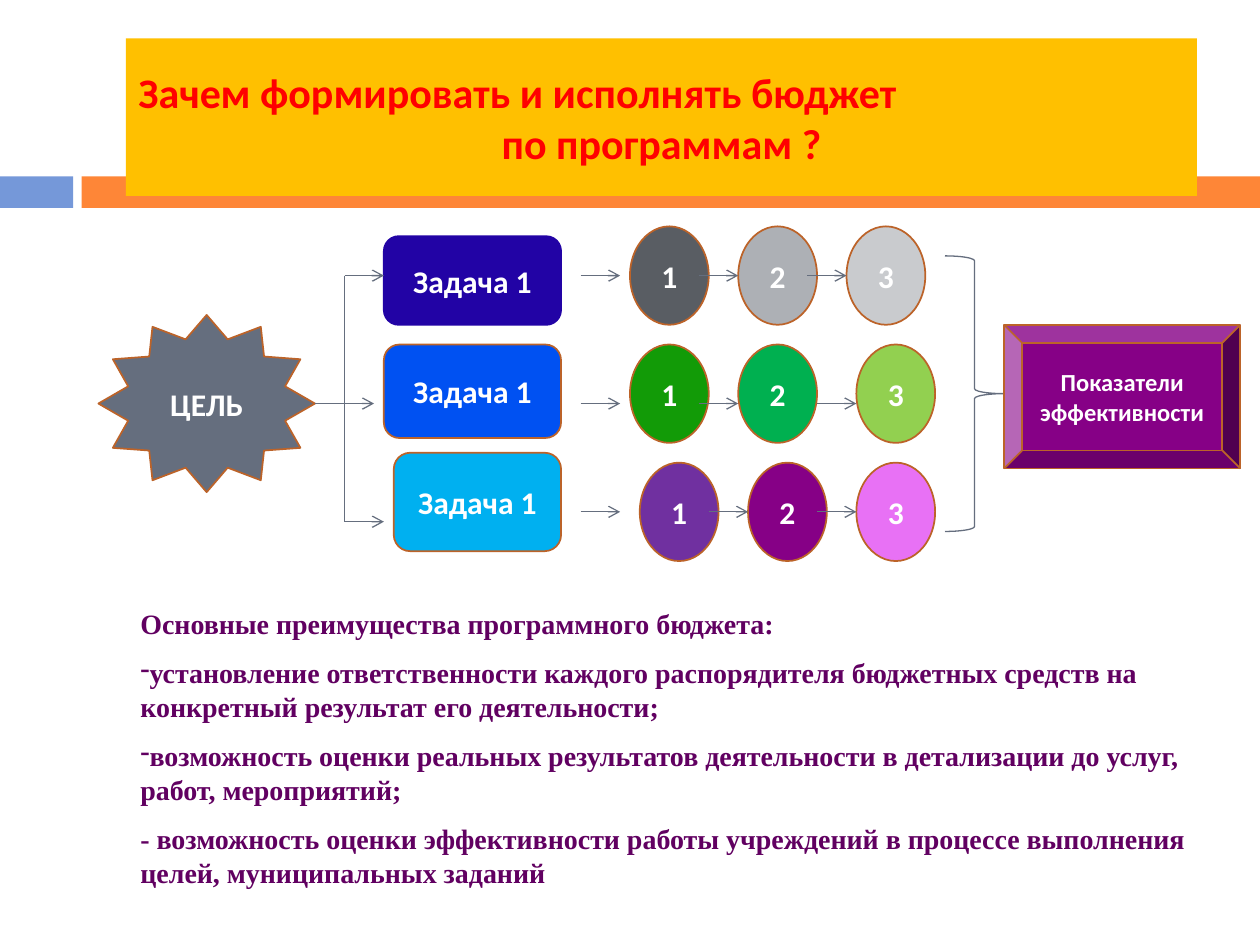
from dataclasses import dataclass
import lxml.etree
import pptx
import pptx.dml.color
import pptx.enum.shapes
import pptx.enum.text
import pptx.oxml.ns
import pptx.util

SHAPE = pptx.enum.shapes.MSO_SHAPE
ALIGN = pptx.enum.text.PP_ALIGN
ANCHOR = pptx.enum.text.MSO_ANCHOR
GRID = pptx.util.Inches(10) / 128  # 128 columns by 96 rows


@dataclass(frozen=True)
class Theme:
    head_font: str = "Calibri"
    body_font: str = "Times New Roman"
    title_size: int = 24
    label_size: int = 18
    result_size: int = 14
    body_size: int = 16
    blue: str = "7598D9"
    orange: str = "FE8637"
    gold: str = "FFC000"
    red: str = "FF0000"
    white: str = "FFFFFF"
    slate: str = "656E7E"
    outline: str = "BC6329"
    purple: str = "860086"
    body: str = "610061"


@dataclass(frozen=True)
class Box:
    col: float
    row: float
    cols: float
    rows: float

    def emu(self) -> list[int]:
        return [round(v * GRID) for v in (self.col, self.row, self.cols, self.rows)]


@dataclass(frozen=True)
class Task:
    box: Box
    fill: str
    line: str
    arrow_row: float
    step_row: float
    step_cols: tuple[float, ...]
    step_fills: tuple[str, ...]


T = Theme()
TASKS = [
    Task(Box(39, 24, 18, 9), "2203A5", "2203A5", 28, 23, (64, 75, 86),
         ("595D63", "ADB0B5", "C9CBCE")),
    Task(Box(39, 35, 18, 9.5), "0051F2", T.outline, 41, 35, (64, 75, 87),
         ("129B07", "00B050", "92D050")),
    Task(Box(40, 46, 17, 10), "00B0F0", T.outline, 52, 47, (65, 76, 87),
         ("7030A0", T.purple, "E871F5")),
]
BENEFITS = [
    ("Основные преимущества программного бюджета:", False),
    ("установление ответственности каждого распорядителя бюджетных средств на "
     "конкретный результат его деятельности;", True),
    ("возможность оценки реальных результатов деятельности в детализации до услуг, "
     "работ, мероприятий;", True),
    ("- возможность оценки эффективности работы учреждений в процессе выполнения "
     "целей, муниципальных заданий", False),
]


def rgb(value: str) -> pptx.dml.color.RGBColor:
    return pptx.dml.color.RGBColor.from_string(value)


def add_run(p, text: str, font: str, size: float, color: str) -> None:
    r = p.add_run()
    r.text = text
    for name, value in {"name": font, "size": pptx.util.Pt(size), "bold": True}.items():
        setattr(r.font, name, value)
    r.font.color.rgb = rgb(color)


def add_shape(s, kind, box: Box, fill: str | None, line: str | None = None,
              text: str = "", size: float = T.label_size, width: float = 1):
    sp = s.shapes.add_shape(kind, *box.emu())
    sp.shadow.inherit = False
    if fill:
        sp.fill.solid()
        sp.fill.fore_color.rgb = rgb(fill)
    else:
        sp.fill.background()
    if line:
        sp.line.color.rgb = rgb(line)
        sp.line.width = pptx.util.Pt(width)
    else:
        sp.line.fill.background()
    tf = sp.text_frame
    tf.vertical_anchor = ANCHOR.MIDDLE
    if text:
        tf.paragraphs[0].alignment = ALIGN.CENTER
        add_run(tf.paragraphs[0], text, T.head_font, size, T.white)
    return sp


def add_line(s, col1: float, row1: float, col2: float, row2: float, arrow: bool = True) -> None:
    ends = [round(v * GRID) for v in (col1, row1, col2, row2)]
    cx = s.shapes.add_connector(pptx.enum.shapes.MSO_CONNECTOR.STRAIGHT, *ends)
    cx.line.color.rgb = rgb(T.slate)
    cx.line.width = pptx.util.Pt(0.75)
    qn = pptx.oxml.ns.qn
    if arrow:
        lxml.etree.SubElement(cx.line._get_or_add_ln(), qn("a:tailEnd"), type="arrow")
    lxml.etree.SubElement(cx._element.spPr, qn("a:effectLst"))


def add_title(s) -> None:
    add_shape(s, SHAPE.RECTANGLE, Box(0, 17.92, 7.45, 3.2), T.blue)
    add_shape(s, SHAPE.RECTANGLE, Box(8.3, 17.92, 119.7, 3.2), T.orange)
    tf = add_shape(s, SHAPE.RECTANGLE, Box(12.8, 3.9, 108.8, 16), T.gold).text_frame
    lines = [("Зачем формировать и исполнять бюджет", ALIGN.LEFT),
             ("по программам ?", ALIGN.CENTER)]
    for i, (text, align) in enumerate(lines):
        p = tf.add_paragraph() if i else tf.paragraphs[0]
        p.alignment = align
        add_run(p, text, T.head_font, T.title_size, T.red)


def add_task(s, task: Task) -> None:
    """Draw one task with its numbered steps and the arrows between them."""
    add_shape(s, SHAPE.FLOWCHART_ALTERNATE_PROCESS, task.box, task.fill, task.line, "Задача 1")
    for i, (col, fill) in enumerate(zip(task.step_cols, task.step_fills), 1):
        add_shape(s, SHAPE.OVAL, Box(col, task.step_row, 8, 10), fill, T.outline, str(i))
    for tip in (63, *task.step_cols[1:]):
        add_line(s, tip - 4, task.arrow_row, tip, task.arrow_row)


def add_benefits(s) -> None:
    tf = s.shapes.add_textbox(*Box(13, 61, 113, 30.6).emu()).text_frame
    tf.word_wrap = True
    tf.auto_size = pptx.enum.text.MSO_AUTO_SIZE.SHAPE_TO_FIT_TEXT
    for i, (text, bullet) in enumerate(BENEFITS):
        p = tf.add_paragraph() if i else tf.paragraphs[0]
        p.space_before = pptx.util.Pt(9 if i else 0)
        if bullet:
            lxml.etree.SubElement(p._p.get_or_add_pPr(), pptx.oxml.ns.qn("a:buChar"), char="-")
        add_run(p, text, T.body_font, T.body_size, T.body)


def main() -> None:
    prs = pptx.Presentation()
    prs.slide_width, prs.slide_height = pptx.util.Inches(10), pptx.util.Inches(7.5)
    s = prs.slides.add_slide(prs.slide_layouts[6])
    add_title(s)
    add_shape(s, SHAPE.STAR_12_POINT, Box(10, 32, 22, 18), T.slate, T.outline, "ЦЕЛЬ")
    for task in TASKS:
        add_task(s, task)
    add_line(s, 35, 28, 35, 53, arrow=False)
    add_line(s, 32, 41, 38, 41)
    for row in (28, 53):
        add_line(s, 35, row, 39, row)
    add_shape(s, SHAPE.RIGHT_BRACE, Box(96, 26, 6, 28), None, T.slate, width=0.75)
    add_shape(s, SHAPE.BEVEL, Box(102, 33, 24, 14.6), T.purple, T.outline,
              "Показатели эффективности", T.result_size)
    add_benefits(s)
    prs.save("out.pptx")


if __name__ == "__main__":
    main()
